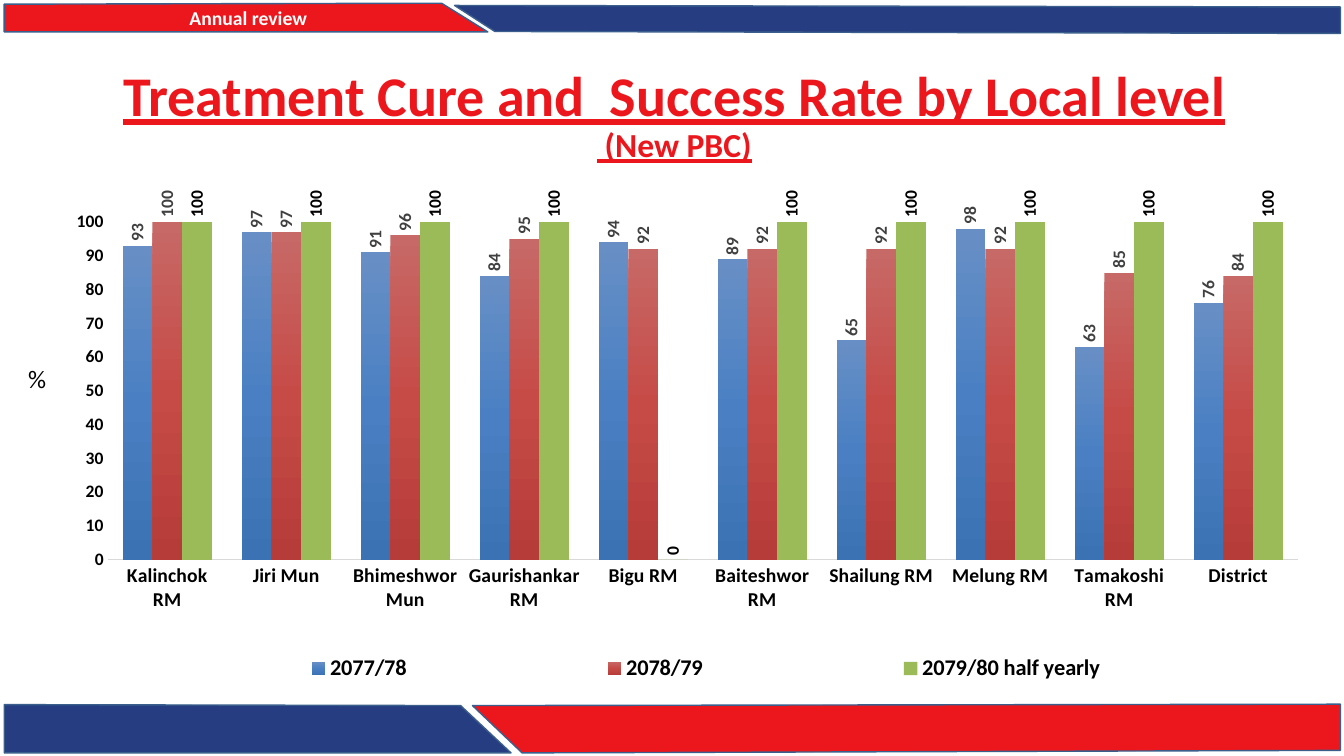
from dataclasses import dataclass

from pptx import Presentation
from pptx.chart.data import CategoryChartData
from pptx.dml.color import RGBColor
from pptx.enum.chart import XL_CHART_TYPE, XL_LABEL_POSITION, XL_LEGEND_POSITION, XL_TICK_MARK
from pptx.enum.text import MSO_ANCHOR, MSO_AUTO_SIZE, PP_ALIGN
from pptx.oxml import parse_xml
from pptx.oxml.ns import nsdecls, qn
from pptx.util import Pt


@dataclass(frozen=True)
class Theme:
    font: str = "Calibri"
    red: str = "EC171C"
    navy: str = "263D81"
    outline: str = "3A5F8C"
    white: str = "FFFFFF"
    black: str = "000000"
    gray: str = "404040"
    axis: str = "D9D9D9"
    blue_bars: tuple = ("688FC5", "4A80C3", "3B72B3")
    red_bars: tuple = ("C76967", "C64B47", "B63C39")
    green_bars: tuple = ("9BBB59",)
    title: float = 40
    subtitle: float = 24
    unit: float = 18
    legend: float = 16
    banner: float = 14
    category: float = 14
    value: float = 12.5


THEME = Theme()
CATEGORIES = ["Kalinchok RM", "Jiri Mun", "Bhimeshwor Mun", "Gaurishankar RM", "Bigu RM",
              "Baiteshwor RM", "Shailung RM", "Melung RM", "Tamakoshi RM", "District"]
# Name, values, bar colours from top to bottom, label colour
SERIES = [
    ("2077/78", [93, 97, 91, 84, 94, 89, 65, 98, 63, 76], THEME.blue_bars, THEME.gray),
    ("2078/79", [100, 97, 96, 95, 92, 92, 92, 92, 85, 84], THEME.red_bars, THEME.gray),
    ("2079/80 half yearly", [100, 100, 100, 100, 0, 100, 100, 100, 100, 100],
     THEME.green_bars, THEME.black),
]


class SlideBuilder:
    def __init__(self, page, theme):
        self.page = page
        self.theme = theme

    def style(self, font, size, color, bold=True):
        font.name = self.theme.font
        font.size = Pt(size)
        font.bold = bold
        font.color.rgb = RGBColor.from_string(color)

    def span(self, para, text, size, color, bold=True, underline=None):
        span = para.add_run()
        span.text = text
        self.style(span.font, size, color, bold)
        span.font.underline = underline

    def banner(self, points, color, text=None):
        (left, top), *rest = [(Pt(x), Pt(y)) for x, y in points]
        outline = self.page.shapes.build_freeform(left, top)
        outline.add_line_segments(rest, close=True)
        shape = outline.convert_to_shape()
        shape.shadow.inherit = False
        shape.fill.solid()
        shape.fill.fore_color.rgb = RGBColor.from_string(color)
        shape.line.color.rgb = RGBColor.from_string(self.theme.outline)
        shape.line.width = Pt(1)
        if text:
            shape.text_frame.vertical_anchor = MSO_ANCHOR.MIDDLE
            para = shape.text_frame.paragraphs[0]
            para.alignment = PP_ALIGN.CENTER
            self.span(para, text, self.theme.banner, self.theme.white)

    def title(self, heading, detail, left, top, width, height):
        box = self.page.shapes.title
        box.left, box.top, box.width, box.height = Pt(left), Pt(top), Pt(width), Pt(height)
        frame = box.text_frame
        frame.auto_size = MSO_AUTO_SIZE.NONE
        frame.vertical_anchor = MSO_ANCHOR.MIDDLE
        para = frame.paragraphs[0]
        para.alignment = PP_ALIGN.CENTER
        para.line_spacing = 0.9
        self.span(para, heading, self.theme.title, self.theme.red, underline=True)
        para.add_line_break()
        self.span(para, detail, self.theme.subtitle, self.theme.red, underline=True)

    def label(self, text, left, top, width, height):
        box = self.page.shapes.add_textbox(Pt(left), Pt(top), Pt(width), Pt(height))
        box.text_frame.word_wrap = True
        self.span(box.text_frame.paragraphs[0], text, self.theme.unit, self.theme.black, bold=False)

    def place(self, element, index, x, y, width, height, inner=False):
        """Give a chart part a fixed place, as fractions of the chart."""
        for old in element.findall(qn("c:layout")):
            element.remove(old)
        target = '<c:layoutTarget val="inner"/>' if inner else ""
        element.insert(index, parse_xml(
            f'<c:layout {nsdecls("c")}><c:manualLayout>{target}'
            '<c:xMode val="edge"/><c:yMode val="edge"/>'
            f'<c:x val="{x}"/><c:y val="{y}"/><c:w val="{width}"/><c:h val="{height}"/>'
            '</c:manualLayout></c:layout>'))

    def paint(self, series, colors):
        if len(colors) == 1:
            series.format.fill.solid()
            series.format.fill.fore_color.rgb = RGBColor.from_string(colors[0])
            return
        step = 100000 // (len(colors) - 1)
        stops = "".join(f'<a:gs pos="{i * step}"><a:srgbClr val="{color}"/></a:gs>'
                        for i, color in enumerate(colors))
        series._element.get_or_add_spPr().append(parse_xml(
            f'<a:gradFill {nsdecls("a")} rotWithShape="1"><a:gsLst>{stops}</a:gsLst>'
            '<a:lin ang="5400000" scaled="0"/></a:gradFill>'))

    def value_labels(self, series, color):
        labels = series.data_labels
        labels.show_value = True
        labels.position = XL_LABEL_POSITION.OUTSIDE_END
        labels.number_format = "#,##0"
        labels.number_format_is_linked = False
        self.style(labels.font, self.theme.value, color)
        body = labels._element.find(qn("c:txPr")).find(qn("a:bodyPr"))
        body.set("rot", "-5400000")
        body.set("vert", "horz")

    def column_chart(self, categories, rows, left, top, width, height):
        data = CategoryChartData(number_format="0")
        data.categories = categories
        for name, values, *_ in rows:
            data.add_series(name, values)
        chart = self.page.shapes.add_chart(XL_CHART_TYPE.COLUMN_CLUSTERED, Pt(left), Pt(top),
                                           Pt(width), Pt(height), data).chart
        chart.has_title = False
        self.style(chart.font, 10, self.theme.black, bold=False)

        # Columns
        plot = chart.plots[0]
        plot.gap_width = 100
        plot.overlap = 0
        plot.vary_by_categories = False
        for series, (_, _, colors, label_color) in zip(plot.series, rows):
            series.invert_if_negative = False
            self.paint(series, colors)
            self.value_labels(series, label_color)

        # Axes
        for axis, size in ((chart.category_axis, self.theme.category),
                           (chart.value_axis, self.theme.value)):
            axis.has_major_gridlines = False
            axis.major_tick_mark = axis.minor_tick_mark = XL_TICK_MARK.NONE
            self.style(axis.tick_labels.font, size, self.theme.black)
        line = chart.category_axis.format.line
        line.color.rgb = RGBColor.from_string(self.theme.axis)
        line.width = Pt(1)
        scale = chart.value_axis
        scale.format.line.fill.background()
        scale.minimum_scale, scale.maximum_scale, scale.major_unit = 0, 100, 10

        # Legend and layout
        chart.has_legend = True
        chart.legend.position = XL_LEGEND_POSITION.BOTTOM
        chart.legend.include_in_layout = False
        self.style(chart.legend.font, self.theme.legend, self.theme.black)
        self.place(chart.legend._element, 1, 0.06, 0.93, 0.92, 0.07)
        plot_area = chart._chartSpace.chart.plotArea
        self.place(plot_area, 0, 0.052, 0.065, 0.931, 0.677, inner=True)


def main():
    deck = Presentation()
    deck.slide_width, deck.slide_height = Pt(960), Pt(540)
    page = deck.slides.add_slide(deck.slide_layouts[5])
    builder = SlideBuilder(page, THEME)

    # Top and bottom banners
    builder.banner([(3, 3), (315.5, 2.3), (348.5, 22.8), (3, 22.8)], THEME.red, " Annual review")
    builder.banner([(3, 503.3), (329, 504), (365, 537.8), (3, 537.8)], THEME.navy)
    builder.banner([(337.5, 504), (957.5, 503), (957.5, 536), (373, 537.8)], THEME.red)
    builder.banner([(324.7, 3.9), (957.5, 5), (957.5, 23.9), (353.5, 22.5)], THEME.navy)

    # Title and chart
    builder.title("Treatment Cure and  Success Rate by Local level", " (New PBC)",
                  18, 31, 927.4, 104.4)
    builder.label("%", 13, 255.6, 31.7, 29)
    builder.column_chart(CATEGORIES, SERIES, 29.5, 135.4, 913, 356.4)

    deck.save("out.pptx")


if __name__ == "__main__":
    main()
